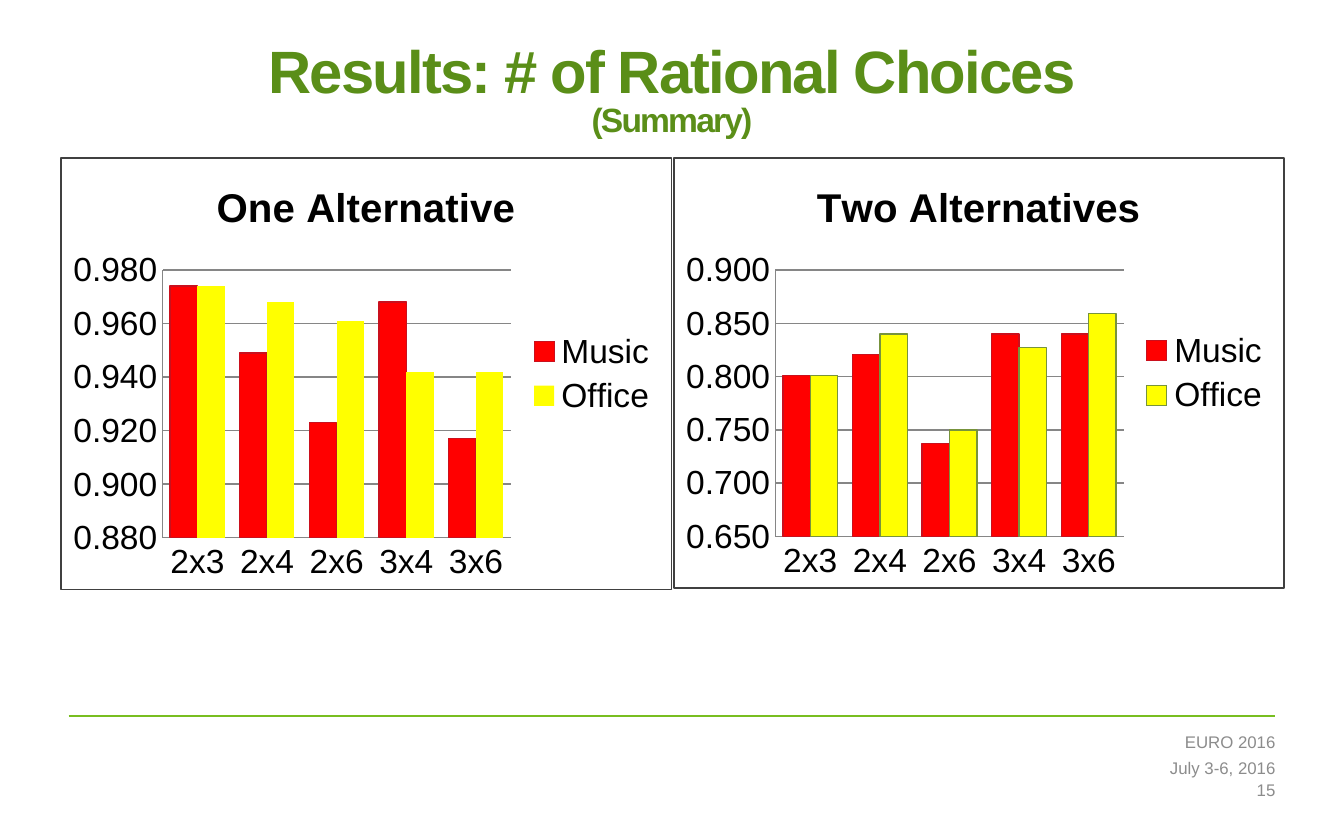
from lxml import etree
from pptx import Presentation
from pptx.chart.data import CategoryChartData
from pptx.dml.color import RGBColor
from pptx.enum.chart import XL_CHART_TYPE, XL_LEGEND_POSITION, XL_TICK_MARK
from pptx.enum.shapes import MSO_CONNECTOR
from pptx.enum.text import MSO_ANCHOR, PP_ALIGN
from pptx.oxml import parse_xml
from pptx.oxml.ns import nsdecls, qn
from pptx.util import Inches, Pt

SIZES = ["2x3", "2x4", "2x6", "3x4", "3x6"]


def color(hex_text):
    return RGBColor.from_string(hex_text)


class SlideBuilder:
    font_name = "Arial"
    title_color = "5A8E18"
    rule_color = "78BE20"
    footer_color = "8C8C8C"
    border_color = "404040"
    grid_color = "868686"

    def __init__(self, slide):
        self.slide = slide

    def text_box(self, left, top, width, height, insets, align):
        """Add an empty, vertically centred box and return its paragraph."""
        box = self.slide.shapes.add_textbox(
            Inches(left), Inches(top), Inches(width), Inches(height))
        frame = box.text_frame
        frame.word_wrap = True
        frame.vertical_anchor = MSO_ANCHOR.MIDDLE
        (frame.margin_left, frame.margin_top,
         frame.margin_right, frame.margin_bottom) = map(Inches, insets)
        paragraph = frame.paragraphs[0]
        paragraph.alignment = align
        paragraph.font.name = self.font_name
        return paragraph

    def title(self, heading, subtitle):
        paragraph = self.text_box(0.51, 0.29, 8.98, 0.79, (0, 0, 0, 0), PP_ALIGN.CENTER)
        paragraph.line_spacing = 0.85
        paragraph.font.bold = True
        paragraph.font.color.rgb = color(self.title_color)
        for text, size in ((heading, 32), (subtitle, 18)):
            if paragraph.runs:
                paragraph.add_line_break()
            run = paragraph.add_run()
            run.text = text
            run.font.size = Pt(size)
            run.font._element.set("spc", "-100")

    def footer(self, text, top, height):
        paragraph = self.text_box(5.53, top, 3.96, height, (0.1, 0.05, 0, 0.05), PP_ALIGN.RIGHT)
        paragraph.text = text
        paragraph.font.size = Pt(9)
        paragraph.font.color.rgb = color(self.footer_color)

    def rule(self, left, right, y):
        line = self.slide.shapes.add_connector(
            MSO_CONNECTOR.STRAIGHT, Inches(left), Inches(y), Inches(right), Inches(y))
        line.line.color.rgb = color(self.rule_color)
        line.line.width = Pt(1)
        etree.SubElement(line._element.spPr, qn("a:effectLst"))

    def outline(self, line, hex_text):
        line.color.rgb = color(hex_text)
        line.width = Pt(0.75)

    def column_chart(self, heading, left, height, scale, series, outlines):
        data = CategoryChartData(number_format="0.000")
        data.categories = SIZES
        for name, values in series.items():
            data.add_series(name, values)
        chart = self.slide.shapes.add_chart(
            XL_CHART_TYPE.COLUMN_CLUSTERED, Inches(left), Inches(1.17),
            Inches(4.55), Inches(height), data).chart

        chart.font.name = self.font_name
        chart.font.size = Pt(18)
        chart.font.color.rgb = color("000000")
        heading_text = chart.chart_title.text_frame
        heading_text.text = heading
        heading_font = heading_text.paragraphs[0].font
        heading_font.name = self.font_name
        heading_font.size = Pt(21.6)
        heading_font.bold = True
        chart.chart_title.include_in_layout = False
        chart.has_legend = True
        chart.legend.position = XL_LEGEND_POSITION.RIGHT
        chart.legend.include_in_layout = False

        for axis in (chart.category_axis, chart.value_axis):
            axis.major_tick_mark = XL_TICK_MARK.NONE
            axis.minor_tick_mark = XL_TICK_MARK.NONE
            self.outline(axis.format.line, self.grid_color)
        axis = chart.value_axis
        axis.minimum_scale, axis.maximum_scale, axis.major_unit = scale
        axis.tick_labels.number_format = "0.000"
        axis.tick_labels.number_format_is_linked = False
        self.outline(axis.major_gridlines.format.line, self.grid_color)

        plot = chart.plots[0]
        plot.gap_width = 55
        plot.overlap = 0
        plot.vary_by_categories = False
        for bars, fill, edge in zip(plot.series, ("FF0000", "FFFF00"), outlines):
            bars.format.fill.solid()
            bars.format.fill.fore_color.rgb = color(fill)
            if edge:
                self.outline(bars.format.line, edge)
            else:
                bars.format.line.fill.background()
        self.chart_border(chart)

    def chart_border(self, chart):
        border = parse_xml(
            f'<c:spPr {nsdecls("c", "a")}><a:noFill/><a:ln w="{Pt(0.75)}"><a:solidFill>'
            f'<a:srgbClr val="{self.border_color}"/></a:solidFill></a:ln></c:spPr>')
        chart._chartSpace.find(qn("c:chart")).addnext(border)


def main():
    deck = Presentation()
    deck.slide_width, deck.slide_height = Inches(10), Inches(6.25)
    builder = SlideBuilder(deck.slides.add_slide(deck.slide_layouts[6]))

    builder.rule(0.51, 9.49, 5.33)
    builder.title("Results: # of Rational Choices", "(Summary)")
    builder.column_chart(
        "One Alternative", 0.45, 3.22, (0.88, 0.98, 0.02),
        {"Music": (0.974, 0.949, 0.923, 0.968, 0.917),
         "Office": (0.974, 0.968, 0.961, 0.942, 0.942)},
        ("CA101D", None))
    builder.column_chart(
        "Two Alternatives", 5.01, 3.21, (0.65, 0.9, 0.05),
        {"Music": (0.801, 0.821, 0.737, 0.84, 0.84),
         "Office": (0.801, 0.84, 0.75, 0.827, 0.859)},
        ("CA101D", "77933C"))
    builder.footer("July 3-6, 2016", 5.63, 0.17)
    builder.footer("EURO 2016", 5.41, 0.22)
    builder.footer("15", 5.8, 0.15)
    deck.save("out.pptx")


if __name__ == "__main__":
    main()
